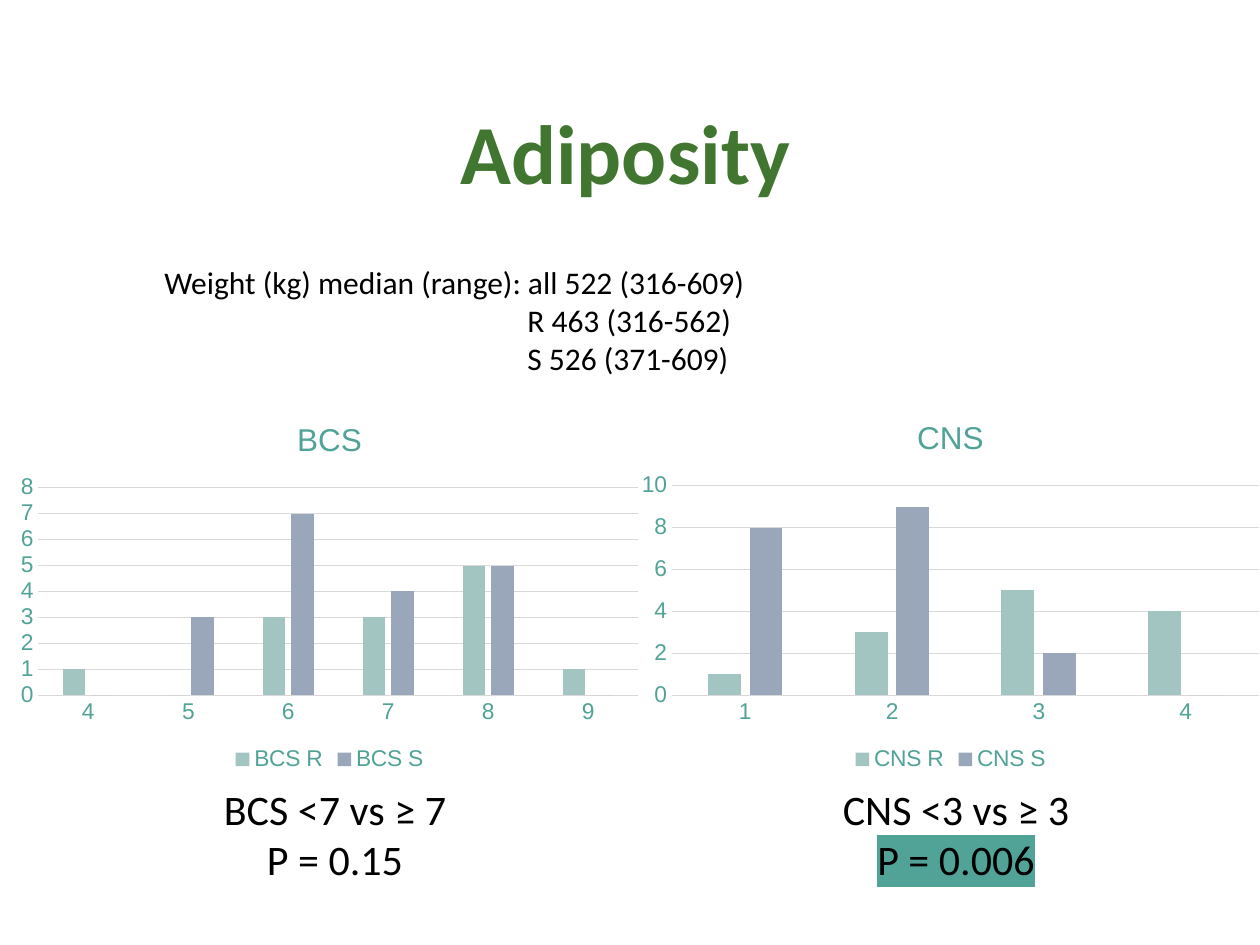
from lxml import etree
from pptx import Presentation
from pptx.chart.data import CategoryChartData as ChartData
from pptx.dml.color import RGBColor
from pptx.enum.chart import XL_CHART_TYPE as Kind, XL_LEGEND_POSITION as Place
from pptx.enum.chart import XL_TICK_MARK as Tick
from pptx.enum.text import MSO_ANCHOR as Anchor, MSO_AUTO_SIZE as Fit, PP_ALIGN as Align
from pptx.oxml.ns import qn
from pptx.util import Emu, Pt

GREEN = RGBColor(0x41, 0x76, 0x30)
TEAL = RGBColor(0x51, 0xA3, 0x98)
MINT = RGBColor(0xA2, 0xC5, 0xC2)
SLATE = RGBColor(0x9A, 0xA7, 0xBA)
GREY = RGBColor(0xD9, 0xD9, 0xD9)
BLACK = RGBColor(0, 0, 0)


def px(n):
    return Emu(round(n * 914400 / 126))


def style(font, size, color, name="Calibri", bold=False):
    font.size, font.name, font.bold = Pt(size), name, bold
    font.color.rgb = color


def add_title(slide, box, text):
    title = slide.shapes.title
    title.left, title.top, title.width, title.height = map(px, box)
    frame = title.text_frame
    frame.text = text
    frame.auto_size = Fit.NONE
    frame.vertical_anchor = Anchor.TOP
    frame.margin_top = px(10)
    para = frame.paragraphs[0]
    para.alignment = Align.CENTER
    style(para.runs[0].font, 48, GREEN, bold=True)


def add_text(slide, box, lines, size, align=Align.LEFT, wrap=True):
    frame = slide.shapes.add_textbox(*map(px, box)).text_frame
    frame.text = "\n".join(lines)
    frame.word_wrap = wrap
    for para in frame.paragraphs:
        para.alignment = align
        style(para.runs[0].font, size, BLACK)
    return frame.paragraphs


def add_weights(slide, box):
    lines = ["Weight (kg) median (range): all 522 (316-609)",
             "R 463 (316-562)", "S 526 (371-609)"]
    # Lower lines start below the word "all"
    for para in add_text(slide, box, lines, 18)[1:]:
        props = para._p.get_or_add_pPr()
        props.set("marL", str(px(363)))
        props.set("indent", "0")


def mark(run, color):
    """Put a highlight behind the run."""
    light = etree.Element(qn("a:highlight"))
    etree.SubElement(light, qn("a:srgbClr"), val=str(color))
    run._r.get_or_add_rPr().find(qn("a:latin")).addprevious(light)


def add_bars(slide, box, name, cats, rows):
    data = ChartData()
    data.categories = cats
    for group, vals in zip("RS", rows):
        data.add_series(f"{name} {group}", vals)
    chart = slide.shapes.add_chart(Kind.COLUMN_CLUSTERED, *map(px, box), data).chart
    style(chart.font, 13, TEAL, "Arial")

    chart.has_title = True
    chart.chart_title.include_in_layout = False
    frame = chart.chart_title.text_frame
    frame.text = name
    style(frame.paragraphs[0].runs[0].font, 18, TEAL, "Arial")

    chart.has_legend = True
    chart.legend.position = Place.BOTTOM
    chart.legend.include_in_layout = False
    style(chart.legend.font, 13, TEAL, "Arial")

    # Axes and grid
    across, up = chart.category_axis, chart.value_axis
    for axis in (across, up):
        axis.major_tick_mark = axis.minor_tick_mark = Tick.NONE
        style(axis.tick_labels.font, 13, TEAL, "Arial")
    up.format.line.fill.background()
    for line in (across.format.line, up.major_gridlines.format.line):
        line.color.rgb = GREY
        line.width = Pt(0.75)

    # Bars
    plot = chart.plots[0]
    plot.gap_width, plot.overlap, plot.vary_by_categories = 219, -27, False
    for series, color in zip(plot.series, (MINT, SLATE)):
        series.format.fill.solid()
        series.format.fill.fore_color.rgb = color


def main():
    prs = Presentation()
    prs.slide_width, prs.slide_height = px(1260), px(945)
    slide = prs.slides.add_slide(prs.slide_layouts[5])

    add_title(slide, (53, 91, 1145, 98), "Adiposity")
    add_weights(slide, (152, 257, 614, 127))

    # Score charts
    add_bars(slide, (8, 399, 643, 378), "BCS", list("456789"),
             [(1, 0, 3, 3, 5, 1), (0, 3, 7, 4, 5, 0)])
    add_bars(slide, (629, 397, 643, 380), "CNS", list("1234"),
             [(1, 3, 5, 4), (8, 9, 2, 0)])

    # Test results
    add_text(slide, (210, 777, 250, 115), ["BCS <7 vs ≥ 7", "P = 0.15"],
             24, Align.CENTER, False)
    paras = add_text(slide, (829, 777, 254, 115), ["CNS <3 vs ≥ 3", "P = 0.006"],
                     24, Align.CENTER, False)
    mark(paras[1].runs[0], TEAL)

    prs.save("out.pptx")


if __name__ == "__main__":
    main()
